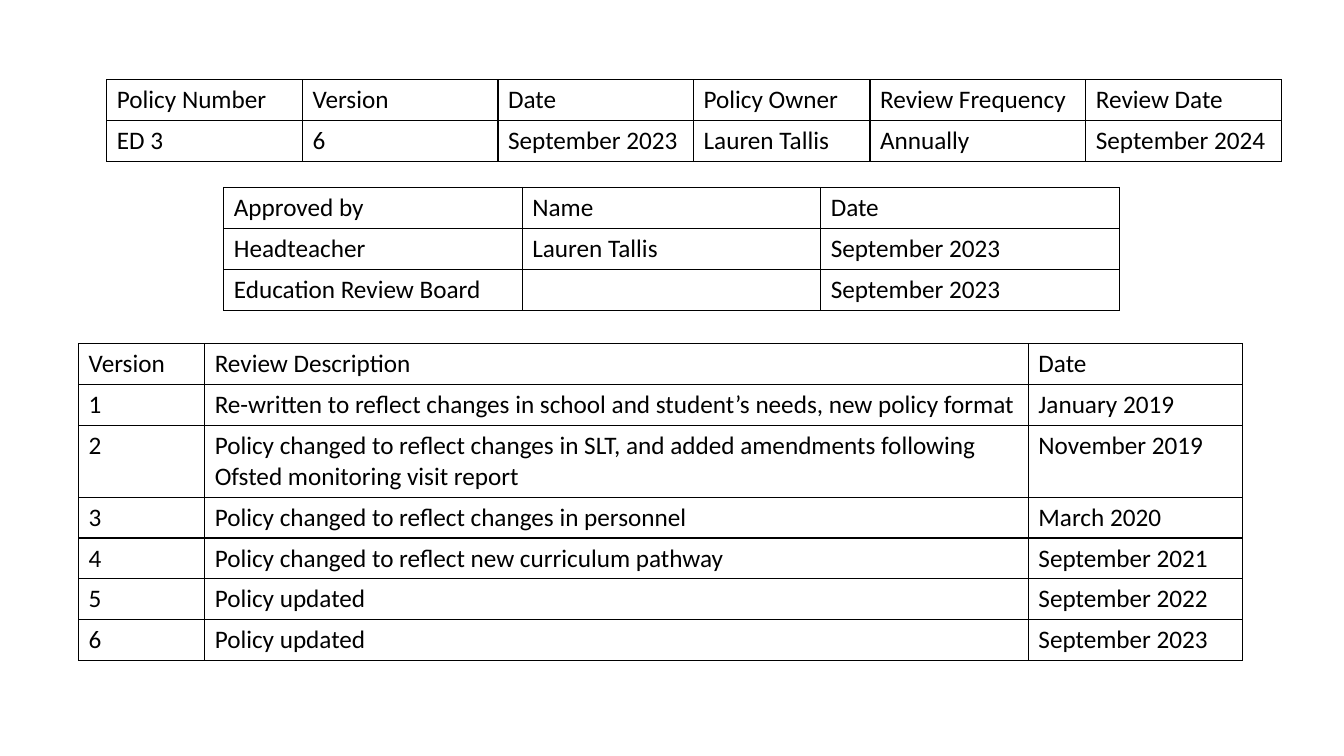
from lxml import etree
from pptx import Presentation
from pptx.dml.color import RGBColor
from pptx.oxml.ns import qn
from pptx.util import Inches, Pt

BLACK = RGBColor(0x00, 0x00, 0x00)
FONT_NAME = "Calibri"
FONT_SIZE = Pt(18)
BORDER_WIDTH = Pt(1)
ROW_HEIGHT = Pt(29.2)
EXTRA_LINE = Pt(22)
BORDER_SIDES = ("a:lnL", "a:lnR", "a:lnT", "a:lnB")

POLICY_ROWS = [
    ("Policy Number", "Version", "Date", "Policy Owner", "Review Frequency", "Review Date"),
    ("ED 3", "6", "September 2023", "Lauren Tallis", "Annually", "September 2024"),
]
APPROVAL_ROWS = [
    ("Approved by", "Name", "Date"),
    ("Headteacher", "Lauren Tallis", "September 2023"),
    ("Education Review Board", "", "September 2023"),
]
HISTORY_ROWS = [
    ("Version", "Review Description", "Date"),
    ("1", "Re-written to reflect changes in school and student’s needs, new policy format", "January 2019"),
    ("2", "Policy changed to reflect changes in SLT, and added amendments following "
          "Ofsted monitoring visit report", "November 2019"),
    ("3", "Policy changed to reflect changes in personnel", "March 2020"),
    ("4", "Policy changed to reflect new curriculum pathway", "September 2021"),
    ("5", "Policy updated", "September 2022"),
    ("6", "Policy updated", "September 2023"),
]


def add_borders(cell):
    properties = cell._tc.get_or_add_tcPr()
    for position, side in enumerate(BORDER_SIDES):
        line = etree.Element(qn(side), w=str(BORDER_WIDTH))
        fill = etree.SubElement(line, qn("a:solidFill"))
        etree.SubElement(fill, qn("a:srgbClr"), val=str(BLACK))
        properties.insert(position, line)


def fill_cell(cell, text):
    cell.text = text
    paragraph = cell.text_frame.paragraphs[0]
    paragraph.font.name = FONT_NAME
    paragraph.font.size = FONT_SIZE
    paragraph.font.color.rgb = BLACK
    cell.fill.background()
    add_borders(cell)


def add_grid(slide, left, top, column_widths, rows, two_line_rows=()):
    widths = [Inches(width) for width in column_widths]
    heights = [ROW_HEIGHT + EXTRA_LINE * (index in two_line_rows) for index in range(len(rows))]
    frame = slide.shapes.add_table(
        len(rows), len(widths), Inches(left), Inches(top), sum(widths), sum(heights))
    table = frame.table
    table.first_row = False
    table.horz_banding = False
    for column, width in zip(table.columns, widths):
        column.width = width
    for row, height, texts in zip(table.rows, heights, rows):
        row.height = height
        for cell, text in zip(row.cells, texts):
            fill_cell(cell, text)


def main():
    presentation = Presentation()
    presentation.slide_width = Inches(13.33)
    presentation.slide_height = Inches(7.5)
    slide = presentation.slides.add_slide(presentation.slide_layouts[6])
    add_grid(slide, 1.06, 0.79, (1.94, 1.94, 1.94, 1.75, 2.14, 1.94), POLICY_ROWS)
    add_grid(slide, 2.22, 1.86, (2.96,) * 3, APPROVAL_ROWS)
    add_grid(slide, 0.78, 3.41, (1.25, 8.17, 2.12), HISTORY_ROWS, two_line_rows=(2,))
    presentation.save("out.pptx")


if __name__ == "__main__":
    main()
